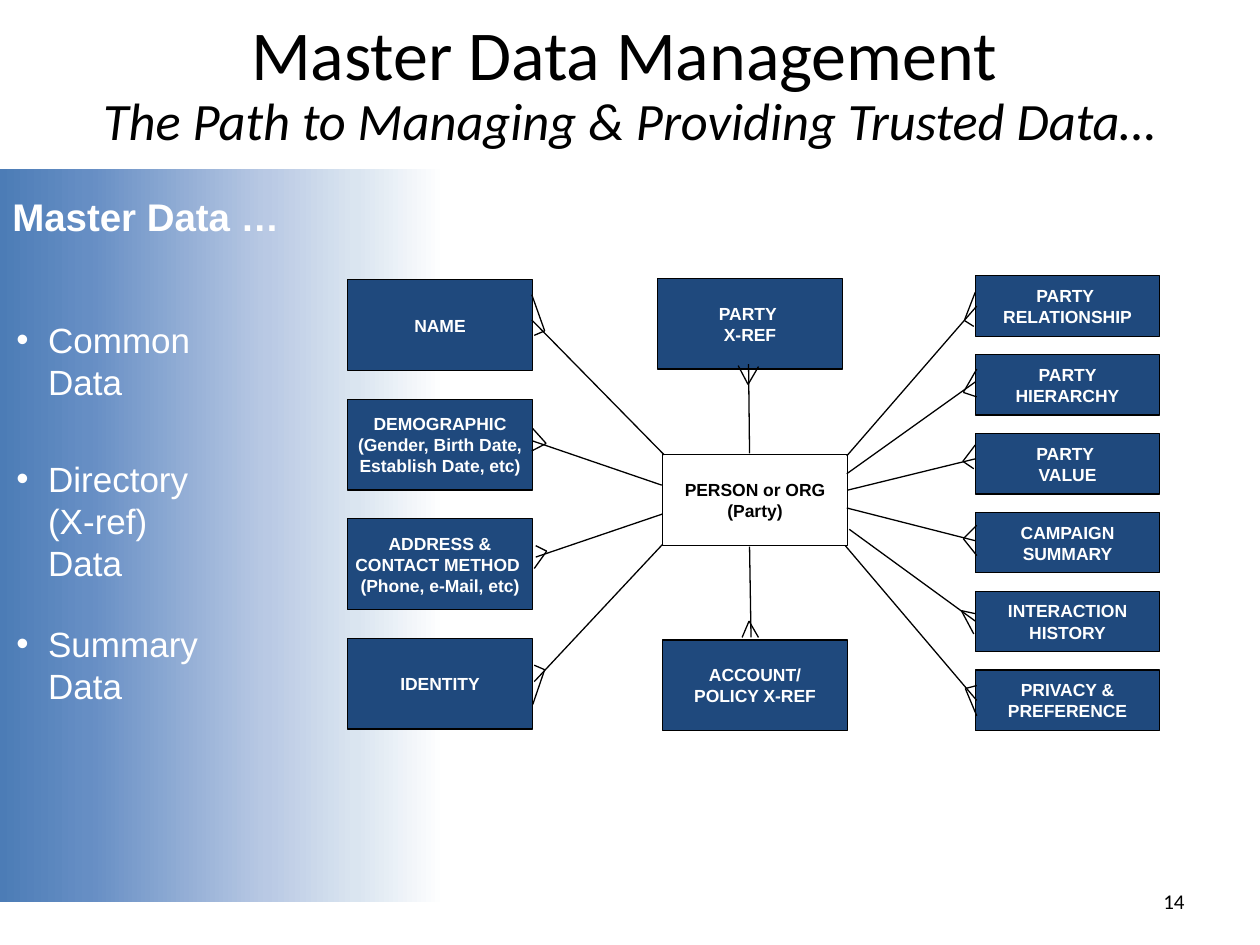
from lxml import etree
from pptx import Presentation
from pptx.dml.color import RGBColor
from pptx.enum.shapes import MSO_CONNECTOR, MSO_SHAPE
from pptx.enum.text import MSO_ANCHOR, PP_ALIGN
from pptx.oxml.ns import qn
from pptx.util import Cm, Pt

RECT, STRAIGHT = MSO_SHAPE.RECTANGLE, MSO_CONNECTOR.STRAIGHT
TOP, MIDDLE = MSO_ANCHOR.TOP, MSO_ANCHOR.MIDDLE
LEFT, CENTER, RIGHT = PP_ALIGN.LEFT, PP_ALIGN.CENTER, PP_ALIGN.RIGHT
BLACK, WHITE, NAVY = "000000", "FFFFFF", "1F497D"

prs = Presentation()
prs.slide_width, prs.slide_height = Cm(25.4), Cm(19.05)
s = prs.slides.add_slide(prs.slide_layouts[6])


def rgb(value):
    return RGBColor.from_string(value)


def write(sp, paragraphs, font, color, align=LEFT, anchor=TOP, bold=False):
    """Fill a shape; a paragraph is a list of (text, size, italic), None breaks the line."""
    tf = sp.text_frame
    tf.word_wrap = True
    tf.vertical_anchor = anchor
    for i, runs in enumerate(paragraphs):
        p = tf.add_paragraph() if i else tf.paragraphs[0]
        p.alignment = align
        for run in runs:
            if run is None:
                p.add_line_break()
                continue
            r = p.add_run()
            r.text, size, r.font.italic = run
            r.font.size, r.font.name, r.font.bold = Pt(size), font, bold
            r.font.color.rgb = rgb(color)
    return tf


# Gradient side panel
sp = s.shapes.add_shape(RECT, 0, Cm(3.41), Cm(8.97), Cm(14.78))
sp.shadow.inherit = False
sp.line.fill.background()
sp.fill.gradient()
sp.fill.gradient_angle = 0
stops = sp.fill._fill._gradFill.find(qn("a:gsLst"))
for stop in list(stops):
    stops.remove(stop)
for position, color in [(0, "4C7CB6"), (20, "668EC4"), (60, "B9C9E4"),
                        (80, "DAE5F0"), (100, WHITE)]:
    gs = etree.SubElement(stops, qn("a:gs"), pos=str(position * 1000))
    etree.SubElement(gs, qn("a:srgbClr"), val=color)

# Title and slide number
sp = s.shapes.add_textbox(0, Cm(0.28), Cm(25.4), Cm(2.92))
tf = write(sp, [[("Master Data Management", 40, False), (" ", 30, True), None,
                 ("The Path to Managing & Providing Trusted Data…", 30, True)]],
           "Calibri", BLACK, CENTER)
tf.paragraphs[0].line_spacing = 0.9
sp = s.shapes.add_textbox(Cm(18.21), Cm(17.65), Cm(5.92), Cm(1.02))
write(sp, [[("14", 12, False)]], "Calibri", BLACK, RIGHT, MIDDLE)

# Panel heading and bullets
sp = s.shapes.add_textbox(0, Cm(3.76), Cm(6.32), Cm(1.19))
write(sp, [[("Master Data …", 22, False)]], "Arial", WHITE, bold=True)
for top, lines in [(6.3, ["Common Data"]), (9.09, ["Directory", "(X-ref) Data"]),
                   (12.42, ["Summary Data"])]:
    sp = s.shapes.add_textbox(Cm(0.08), Cm(top), Cm(4.8), Cm(1.96))
    runs = [(lines[0], 20, False)]
    for line in lines[1:]:
        runs += [None, (line, 20, False)]
    tf = write(sp, [runs], "Arial", WHITE)
    pPr = tf.paragraphs[0]._p.get_or_add_pPr()
    pPr.set("marL", str(Cm(0.64)))
    pPr.set("indent", str(-Cm(0.64)))
    etree.SubElement(pPr, qn("a:buFont"), typeface="Arial")
    etree.SubElement(pPr, qn("a:buChar"), char="•")

# Entity boxes: left, top, height, paragraphs
hub = ["PERSON or ORG (Party)"]
boxes = [(13.36, 9.17, 1.83, hub),
         (13.26, 5.61, 1.83, ["PARTY ", "X-REF"]),
         (13.36, 12.9, 1.83, ["ACCOUNT/", "POLICY X-REF"])]
attributes = [["NAME"],
              ["DEMOGRAPHIC", "(Gender, Birth Date,", "Establish Date, etc)"],
              ["ADDRESS &", "CONTACT METHOD ", "(Phone, e-Mail, etc)"],
              ["IDENTITY"]]
boxes += [(7.01, 5.64 + 2.41 * i, 1.83, t) for i, t in enumerate(attributes)]
facets = [["PARTY ", "RELATIONSHIP"], ["PARTY", "HIERARCHY"], ["PARTY ", "VALUE"],
          ["CAMPAIGN", "SUMMARY"], ["INTERACTION HISTORY"],
          ["PRIVACY &", "PREFERENCE"]]
boxes += [(19.66, 5.56 + 1.59 * i, 1.22, t) for i, t in enumerate(facets)]
for left, top, height, lines in boxes:
    sp = s.shapes.add_shape(RECT, Cm(left), Cm(top), Cm(3.72), Cm(height))
    sp.shadow.inherit = False
    sp.line.color.rgb, sp.line.width = rgb(BLACK), Pt(0.75)
    if lines is hub:
        sp.fill.background()
    else:
        sp.fill.solid()
        sp.fill.fore_color.rgb = rgb(NAVY)
    tf = write(sp, [[(line, 10, False)] for line in lines], "Arial",
               BLACK if lines is hub else WHITE, CENTER, MIDDLE, bold=True)
    tf.margin_left = tf.margin_right = Cm(0.1)
    tf.margin_top = tf.margin_bottom = 0

# Relations: hub end, entity end, then fork and two toes of the crow's foot
relations = [
    ((13.39, 9.17), (10.72, 6.45), (10.98, 6.67), (10.72, 5.94), (10.77, 6.76)),
    ((13.34, 9.78), (10.74, 8.89), (11.01, 8.94), (10.74, 8.64), (10.72, 9.09)),
    ((13.36, 10.36), (10.8, 11.23), (11.02, 11.11), (10.77, 11.46), (10.8, 11)),
    ((13.36, 10.97), (10.77, 13.74), (10.98, 13.5), (10.74, 14.2), (10.77, 13.41)),
    ((15.11, 9.14), (15.09, 7.34), (15.08, 7.75), (14.88, 7.37), (15.29, 7.39)),
    ((15.11, 11.02), (15.14, 12.85), (15.1, 12.52), (15.29, 12.85), (14.96, 12.85)),
    ((17.07, 9.19), (19.69, 6.17), (19.44, 6.46), (19.66, 5.89), (19.63, 6.58)),
    ((17.07, 9.55), (19.66, 7.7), (19.42, 7.91), (19.69, 7.44), (19.69, 8)),
    ((17.09, 9.88), (19.66, 9.25), (19.41, 9.3), (19.66, 8.97), (19.63, 9.45)),
    ((17.07, 10.24), (19.66, 10.9), (19.42, 10.86), (19.69, 10.59), (19.69, 11.2)),
    ((17.12, 10.67), (19.66, 12.52), (19.38, 12.31), (19.66, 12.37), (19.63, 12.78)),
    ((17.04, 11), (19.69, 14.12), (19.46, 13.88), (19.69, 13.82), (19.69, 14.43)),
]
for start, end, fork, toe_a, toe_b in relations:
    for (x1, y1), (x2, y2) in [(start, end), (fork, toe_a), (fork, toe_b)]:
        line = s.shapes.add_connector(STRAIGHT, Cm(x1), Cm(y1), Cm(x2), Cm(y2))
        line.line.color.rgb, line.line.width = rgb(BLACK), Pt(0.75)
        etree.SubElement(line._element.spPr, qn("a:effectLst"))

prs.save("out.pptx")
